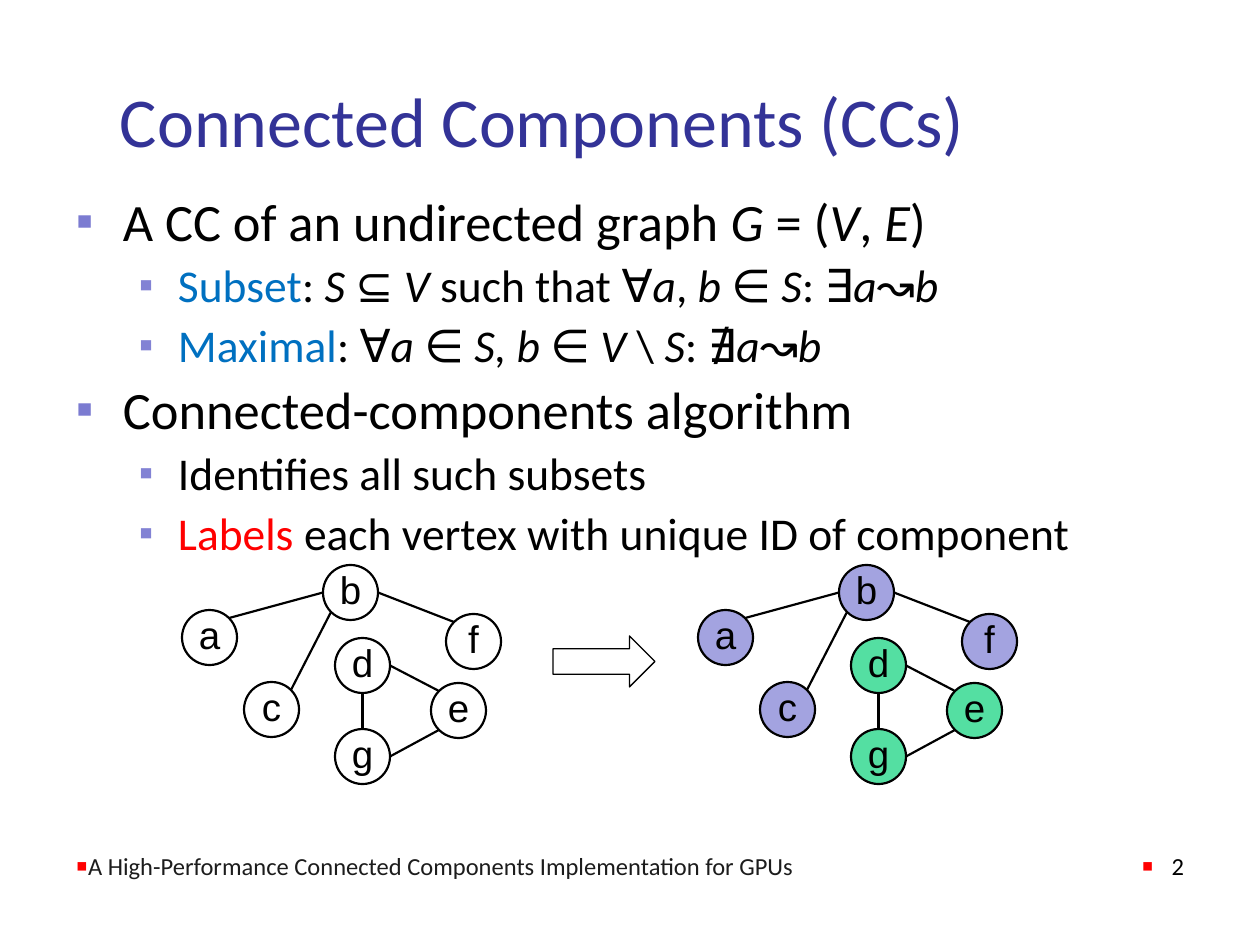
from lxml import etree
from pptx import Presentation
from pptx.dml.color import RGBColor
from pptx.enum.shapes import MSO_CONNECTOR, MSO_SHAPE
from pptx.enum.text import MSO_ANCHOR, PP_ALIGN
from pptx.oxml.ns import qn
from pptx.util import Emu, Pt

PX = 914400 / 126
LEFT, CENTER, RIGHT = PP_ALIGN.LEFT, PP_ALIGN.CENTER, PP_ALIGN.RIGHT
MIDDLE, BOTTOM, TOP = MSO_ANCHOR.MIDDLE, MSO_ANCHOR.BOTTOM, MSO_ANCHOR.TOP
ELLIPSE, ARROW = MSO_SHAPE.OVAL, MSO_SHAPE.RIGHT_ARROW
STRAIGHT = MSO_CONNECTOR.STRAIGHT

COLORS = {
    "title": "333397", "text": "000000", "footer": "1C1C1C",
    "blue": "0070C0", "red": "FF0000",
    "bullet": "7B7BD1", "sub_bullet": "8282D4",
    "violet": "A3A3E0", "green": "54DFA2",
}


def px(value):
    return Emu(round(value * PX))


def rgb(name):
    return RGBColor.from_string(COLORS[name])


class SlideBuilder:
    """Holds the style and the current slide."""

    font = "Calibri"
    label_font = "Arial"
    line_width = 1.25
    insets = (13, 6, 13, 6)

    def __init__(self, page):
        self.page = page

    def set_frame(self, frame, anchor, insets):
        values = {"word_wrap": True, "vertical_anchor": anchor}
        sides = ("left", "top", "right", "bottom")
        values.update((f"margin_{side}", px(gap)) for side, gap in zip(sides, insets))
        for name, value in values.items():
            setattr(frame, name, value)

    def text_box(self, left, top, width, height, anchor=TOP, insets=insets):
        box = self.page.shapes.add_textbox(px(left), px(top), px(width), px(height))
        self.set_frame(box.text_frame, anchor, insets)
        return box.text_frame

    def bullet(self, para, color, percent, margin, hang):
        props = para._p.get_or_add_pPr()
        props.set("marL", str(px(margin)))
        props.set("indent", str(px(-hang)))
        tint = etree.SubElement(props, qn("a:buClr"))
        etree.SubElement(tint, qn("a:srgbClr"), val=COLORS[color])
        etree.SubElement(props, qn("a:buSzPct"), val=str(percent * 1000))
        etree.SubElement(props, qn("a:buFont"), typeface=self.label_font)
        etree.SubElement(props, qn("a:buChar"), char="▪")

    def span(self, para, text, size, color="text", font=font, italic=False):
        span = para.add_run()
        span.text = text
        for name, value in {"size": Pt(size), "name": font, "italic": italic}.items():
            setattr(span.font, name, value)
        span.font.color.rgb = rgb(color)

    def marked_text(self, para, text, size):
        """Stretches between asterisks are italic."""
        for index, part in enumerate(text.split("*")):
            if part:
                self.span(para, part, size, italic=index % 2 == 1)

    def shape(self, kind, left, top, width, height, fill=None, line_width=line_width):
        shape = self.page.shapes.add_shape(kind, px(left), px(top), px(width), px(height))
        shape.shadow.inherit = False
        if fill:
            shape.fill.solid()
            shape.fill.fore_color.rgb = rgb(fill)
        else:
            shape.fill.background()
        shape.line.color.rgb = rgb("text")
        shape.line.width = Pt(line_width)
        return shape

    def vertex(self, label, left, top, size, fill):
        shape = self.shape(ELLIPSE, left, top, size, size, fill)
        self.set_frame(shape.text_frame, BOTTOM, (0, 0, 0, 0))
        para = shape.text_frame.paragraphs[0]
        para.alignment = CENTER
        self.span(para, label, 22, font=self.label_font)

    def edge(self, start, end):
        line = self.page.shapes.add_connector(STRAIGHT, *map(px, start + end))
        line.line.color.rgb = rgb("text")
        line.line.width = Pt(self.line_width)
        etree.SubElement(line._element.spPr, qn("a:effectLst"))


# Level: size, bullet colour, bullet percent, margin, hang
LEVELS = [(30, "bullet", 95, 47, 47), (26, "sub_bullet", 90, 102, 39)]

# Level, coloured lead word, its colour, remaining text
OUTLINE = [
    (0, "", "text", "A CC of an undirected graph *G* = (*V*, *E*)"),
    (1, "Subset", "blue", ": *S* ⊆ *V* such that ∀*a*, *b *∈ *S*: ∃*a*↝*b*"),
    (1, "Maximal", "blue", ": ∀*a *∈ *S, b *∈ *V *\\ *S*: ∄*a*↝*b*"),
    (0, "", "text", "Connected-components algorithm"),
    (1, "", "text", "Identifies all such subsets"),
    (1, "Labels", "red", " each vertex with unique ID of component"),
]

# Graph: top left corner of each vertex, and edges between points on the rims
VERTEX_SIZE = 55
VERTICES = {
    "d": (335, 638), "g": (335, 729), "a": (182, 610), "c": (244, 682),
    "e": (431, 683), "f": (446, 614), "b": (323, 565),
}
DIAGONAL = 0.5 ** 0.5
RIM = {
    "top": (0, -1), "bottom": (0, 1), "left": (-1, 0), "right": (1, 0),
    "top left": (-DIAGONAL, -DIAGONAL), "top right": (DIAGONAL, -DIAGONAL),
    "bottom left": (-DIAGONAL, DIAGONAL),
}
EDGES = [
    ("d", "bottom", "g", "top"), ("e", "top left", "d", "right"),
    ("b", "bottom left", "c", "top right"), ("b", "left", "a", "top right"),
    ("b", "right", "f", "top left"), ("e", "bottom left", "g", "right"),
]
COMPONENTS = {**dict.fromkeys("abcf", "violet"), **dict.fromkeys("deg", "green")}


def rim_point(vertex, side, shift):
    radius = VERTEX_SIZE / 2
    (left, top), (across, down) = VERTICES[vertex], RIM[side]
    return left + shift + radius * (1 + across), top + radius * (1 + down)


def draw_graph(builder, shift, fills):
    for first, first_side, second, second_side in EDGES:
        builder.edge(rim_point(first, first_side, shift),
                     rim_point(second, second_side, shift))
    for label, (left, top) in VERTICES.items():
        builder.vertex(label, left + shift, top, VERTEX_SIZE, fills.get(label))


def main():
    deck = Presentation()
    deck.slide_width, deck.slide_height = px(1260), px(945)
    builder = SlideBuilder(deck.slides.add_slide(deck.slide_layouts[6]))

    # Title
    title = builder.text_box(63, 76, 1134, 88, MIDDLE, (57, 6, 13, 6))
    builder.span(title.paragraphs[0], "Connected Components (CCs)", 40, "title")

    # Outline
    body = builder.text_box(63, 183, 1162, 617)
    for index, (level, lead, color, text) in enumerate(OUTLINE):
        para = body.add_paragraph() if index else body.paragraphs[0]
        size, *bullet = LEVELS[level]
        para.level = level
        builder.bullet(para, *bullet)
        if index:
            para.space_before = Pt(3)
        if lead:
            builder.span(para, lead, size, color)
        builder.marked_text(para, text, size)

    # Footer and page number
    footer = "A High-Performance Connected Components Implementation for GPUs"
    for left, width, align, text, color, hang in [
        (63, 872, LEFT, footer, "footer", 0),
        (935, 262, RIGHT, "2", "text", 30),
    ]:
        para = builder.text_box(left, 823, width, 63, BOTTOM).paragraphs[0]
        para.alignment = align
        builder.bullet(para, "red", 140, hang, hang)
        builder.span(para, text, 14, color)

    # Graph before and after labelling
    draw_graph(builder, 0, {})
    draw_graph(builder, 516, COMPONENTS)
    builder.shape(ARROW, 553, 636, 102, 51, line_width=0.75)

    deck.save("out.pptx")


if __name__ == "__main__":
    main()
